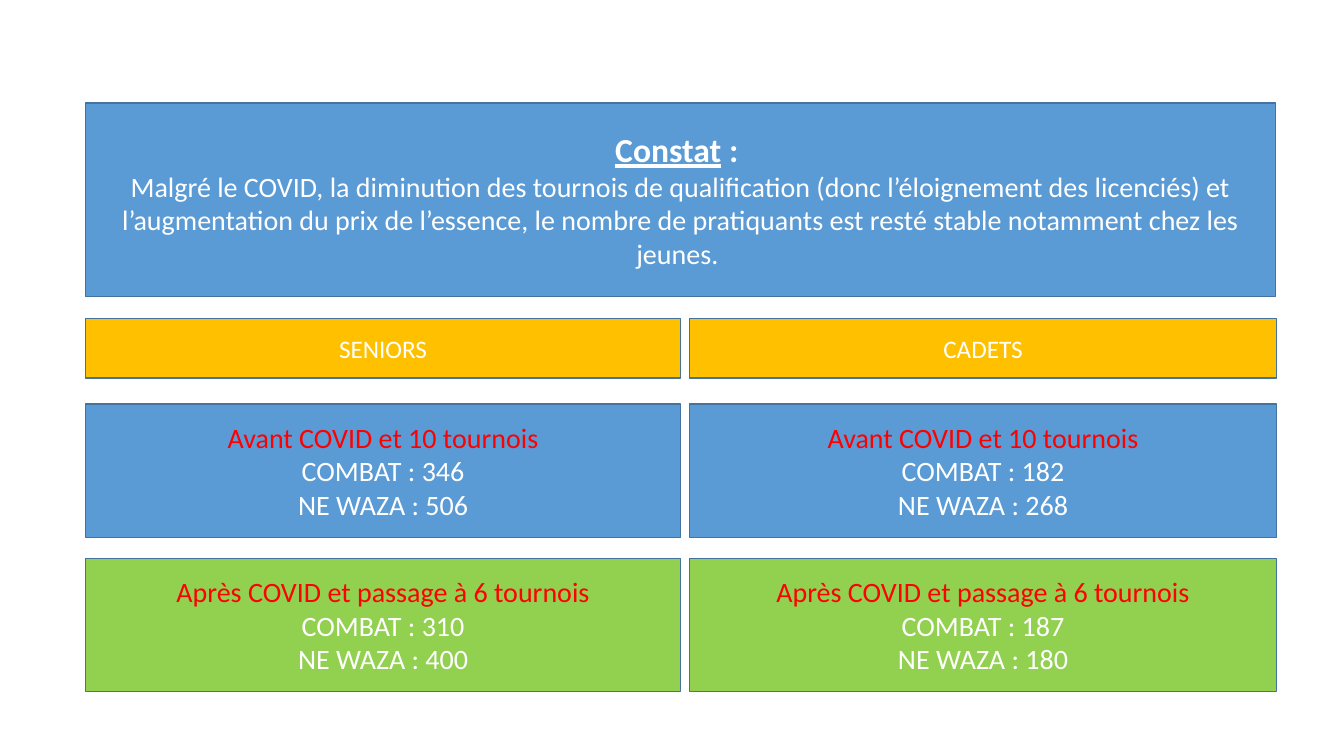
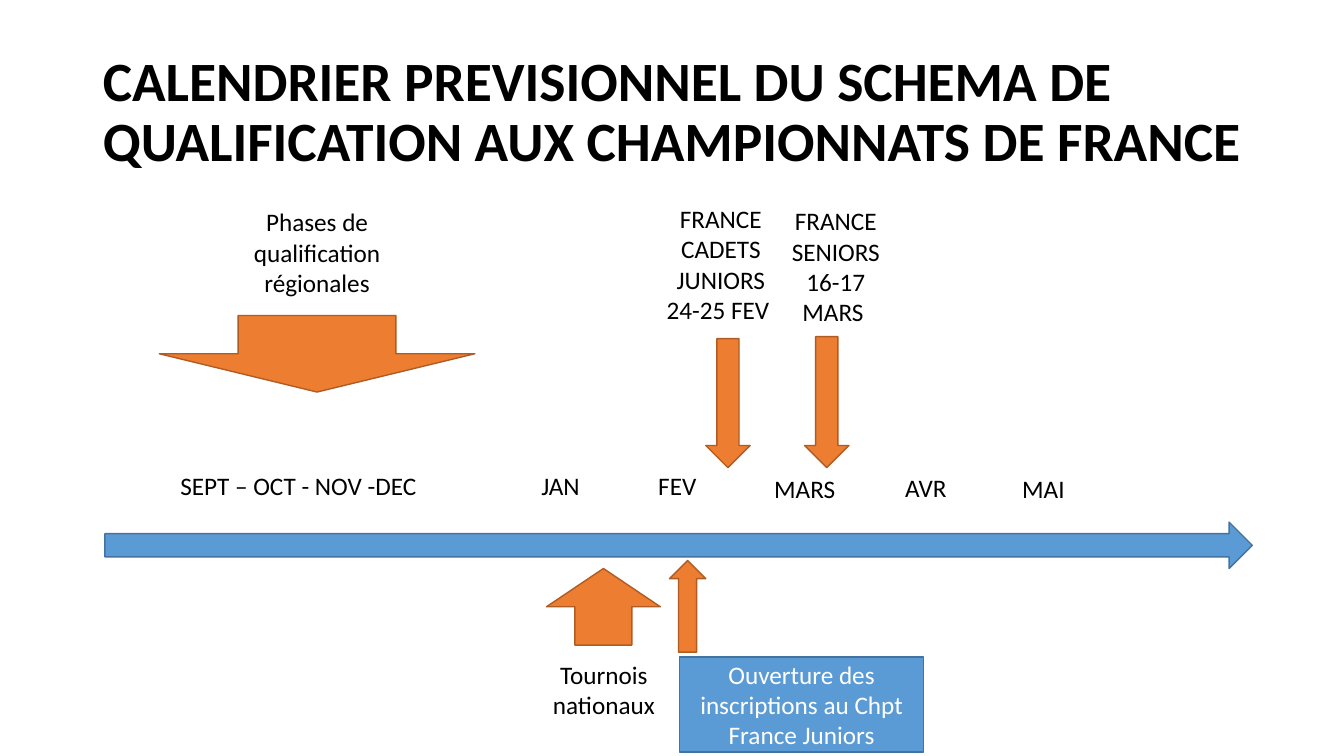
from dataclasses import dataclass
from pptx import Presentation
from pptx.dml.color import RGBColor
from pptx.enum.shapes import MSO_SHAPE
from pptx.enum.text import MSO_ANCHOR, PP_ALIGN
from pptx.util import Inches, Pt


@dataclass(frozen=True)
class Theme:
    font: str = "Calibri"
    blue: str = "5B9BD5"
    navy: str = "43739E"
    gold: str = "FFC000"
    green: str = "92D050"
    orange: str = "ED7D31"
    rust: str = "AF5C24"
    red: str = "FF0000"
    white: str = "FFFFFF"
    black: str = "000000"
    title: float = 39.6
    head: int = 24
    body: int = 20
    label: int = 18


T = Theme()


def write(frame, paras, align=PP_ALIGN.CENTER):
    """Fill a frame; each paragraph is a list of (text, size, colour, bold, underline)."""
    frame.word_wrap = True
    for i, runs in enumerate(paras):
        para = frame.paragraphs[0] if i == 0 else frame.add_paragraph()
        para.alignment = align
        for text, size, color, bold, under in runs:
            run = para.add_run()
            run.text = text
            font = run.font
            font.name, font.size = T.font, Pt(size)
            font.bold, font.underline = bold, under
            font.color.rgb = RGBColor.from_string(color)


def draw(slide, kind, box, fill, line=T.navy, paras=()):
    """Add a filled preset shape, with centred text if any."""
    shape = slide.shapes.add_shape(kind, *map(Inches, box))
    shape.shadow.inherit = False
    shape.fill.solid()
    shape.fill.fore_color.rgb = RGBColor.from_string(fill)
    shape.line.color.rgb = RGBColor.from_string(line)
    shape.line.width = Pt(1)
    shape.text_frame.vertical_anchor = MSO_ANCHOR.MIDDLE
    write(shape.text_frame, paras)


deck = Presentation()
deck.slide_width, deck.slide_height = Inches(13.33), Inches(7.5)

# Slide 1: findings
slide = deck.slides.add_slide(deck.slide_layouts[6])
draw(slide, MSO_SHAPE.RECTANGLE, (0.85, 1.02, 11.8, 1.92), T.blue, paras=[
    [("Constat", T.head, T.white, True, True),
     (" : ", T.head, T.white, True, False)],
    [("Malgré le COVID, la diminution des tournois de qualification "
      "(donc l’éloignement des licenciés) et l’augmentation du prix de "
      "l’essence, le nombre de pratiquants est resté stable notamment "
      "chez les jeunes. ", T.body, T.white, False, False)],
])

# One column per age group: heading, then counts before and after
before, after = "Avant COVID et 10 tournois", "Après COVID et passage à 6 tournois"
groups = [
    ("SENIORS", 0.85, 5.9, (346, 506), (310, 400)),
    ("CADETS", 6.84, 5.82, (182, 268), (187, 180)),
]
for name, left, width, old, new in groups:
    draw(slide, MSO_SHAPE.RECTANGLE, (left, 3.16, width, 0.59), T.gold,
         paras=[[(name, T.label, T.white, False, False)]])
    for top, fill, head, (fight, ground) in (
            (4.01, T.blue, before, old), (5.54, T.green, after, new)):
        lines = [(head, T.red), (f"COMBAT : {fight}", T.white),
                 (f"NE WAZA : {ground}", T.white)]
        draw(slide, MSO_SHAPE.RECTANGLE, (left, top, width, 1.32), fill,
             paras=[[(text, T.body, color, False, False)]
                    for text, color in lines])

# Slide 2: calendar
slide = deck.slides.add_slide(deck.slide_layouts[5])
title = slide.shapes.title
title.left, title.top = Inches(0.92), Inches(0.4)
title.width, title.height = Inches(11.5), Inches(1.45)
title.text_frame.vertical_anchor = MSO_ANCHOR.MIDDLE
write(title.text_frame, [[(
    "CALENDRIER PREVISIONNEL DU SCHEMA DE QUALIFICATION AUX "
    "CHAMPIONNATS DE FRANCE", T.title, T.black, True, False)]], PP_ALIGN.LEFT)
title.text_frame.paragraphs[0].line_spacing = 0.9

# Time axis
draw(slide, MSO_SHAPE.RIGHT_ARROW, (1.04, 5.18, 11.38, 0.46), T.blue)

# Months (left) and events (centred)
months = [
    ("SEPT – OCT - NOV -DEC", 1.69, 4.62, 2.92),
    ("JAN", 5.27, 4.62, 0.72),
    ("FEV", 6.43, 4.62, 0.72),
    ("MARS", 7.58, 4.65, 0.86),
    ("AVR", 8.88, 4.64, 0.86),
    ("MAI", 10.04, 4.65, 0.86),
]
events = [
    (["Phases de qualification régionales"], (2.38, 2, 1.53, 1.01)),
    (["FRANCE CADETS JUNIORS", "24-25 FEV "], (6.45, 1.97, 1.4, 1.31)),
    (["FRANCE SENIORS", "16-17 MARS "], (7.59, 1.99, 1.4, 1.31)),
    (["Tournois nationaux"], (5.06, 6.49, 1.86, 0.71)),
]
labels = [([name], (left, top, width, 0.4), PP_ALIGN.LEFT)
          for name, left, top, width in months]
labels += [(lines, box, PP_ALIGN.CENTER) for lines, box in events]
for lines, box, align in labels:
    text = slide.shapes.add_textbox(*map(Inches, box))
    write(text.text_frame, [[(line, T.label, T.black, False, False)]
                            for line in lines], align)

# Arrows from the events to the axis
arrows = [
    (MSO_SHAPE.DOWN_ARROW, (1.58, 3.13, 3.13, 0.76)),
    (MSO_SHAPE.UP_ARROW, (5.42, 5.64, 1.13, 0.76)),
    (MSO_SHAPE.DOWN_ARROW, (7, 3.36, 0.44, 1.28)),
    (MSO_SHAPE.DOWN_ARROW, (7.98, 3.34, 0.44, 1.3)),
    (MSO_SHAPE.UP_ARROW, (6.64, 5.56, 0.36, 0.91)),
]
for kind, box in arrows:
    draw(slide, kind, box, T.orange, T.rust)

# Opening of entries
draw(slide, MSO_SHAPE.RECTANGLE, (6.74, 6.52, 2.42, 0.94), T.blue, paras=[
    [("Ouverture des inscriptions au Chpt France Juniors",
      T.label, T.white, False, False)]])

deck.save("out.pptx")
